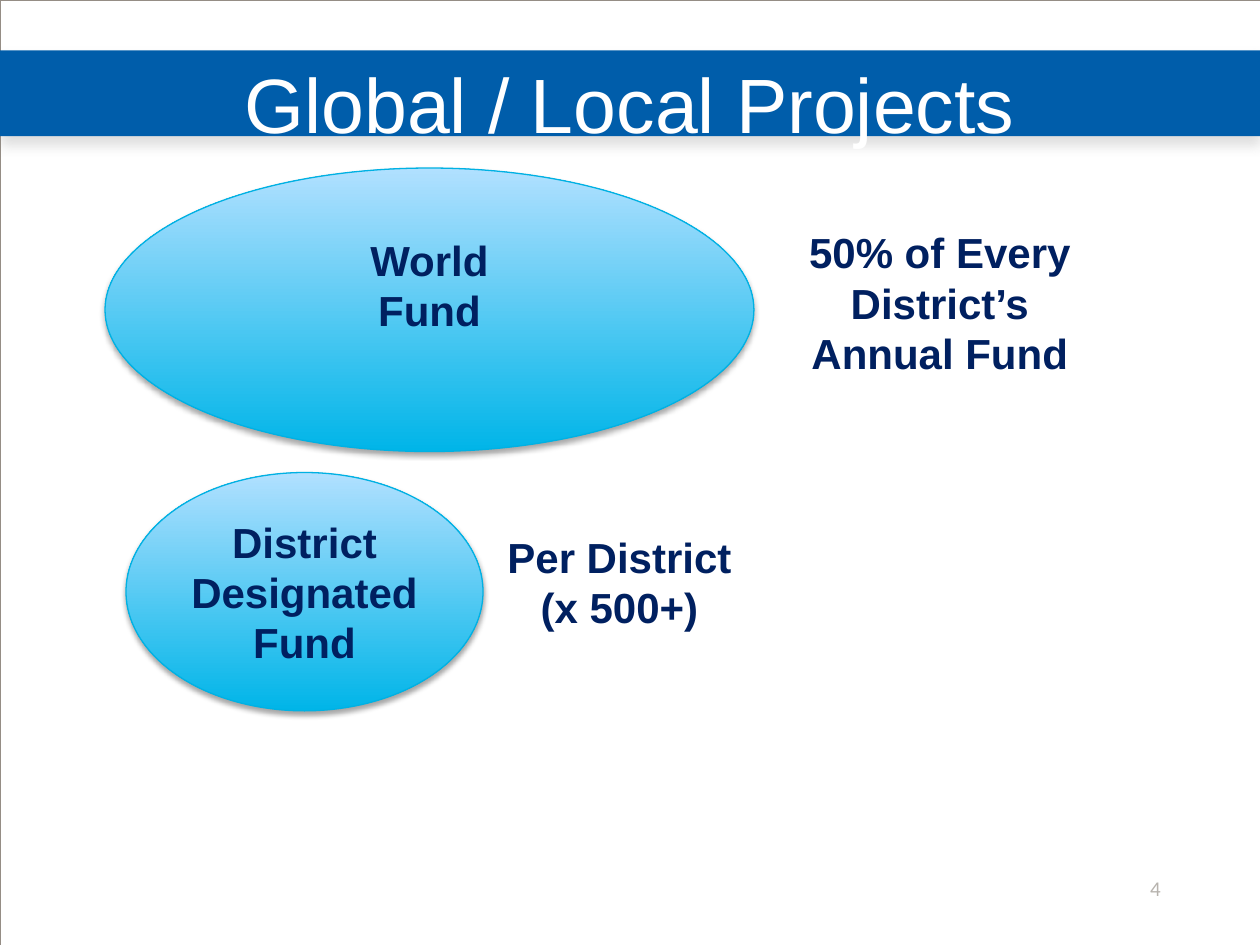
import dataclasses
import typing

import lxml.etree
import pptx
import pptx.dml.color
import pptx.enum.shapes
import pptx.enum.text
import pptx.oxml.ns
import pptx.util

SHAPE = pptx.enum.shapes.MSO_SHAPE
ALIGN = pptx.enum.text.PP_ALIGN
ANCHOR = pptx.enum.text.MSO_ANCHOR
AUTO_SIZE = pptx.enum.text.MSO_AUTO_SIZE
COLUMNS, ROWS = 120, 90


@dataclasses.dataclass(frozen=True)
class Theme:
    frame: str = "958D85"
    banner: str = "005DAA"
    title: str = "FFFFFF"
    label: str = "002060"
    number: str = "B7B3AE"
    fund_line: str = "00B1E3"
    fund_fill: tuple[str, str] = ("00B5E8", "B1E0FF")
    font: str = "Arial"
    number_font: str = "Calibri"
    title_size: float = 44
    label_size: float = 24
    number_size: float = 12


class Cell(typing.NamedTuple):
    column: float
    row: float
    columns: float
    rows: float


class Shadow(typing.NamedTuple):
    color: str
    opacity: int
    blur: float
    distance: float


class Fund(typing.NamedTuple):
    cell: Cell
    lines: list[str]
    bottom_margin: float


class Note(typing.NamedTuple):
    cell: Cell
    lines: list[str]
    wraps: bool


THEME = Theme()
BANNER_SHADOW = Shadow("808080", 25, 7, 4.8)
FUND_SHADOW = Shadow("000000", 35, 3.1, 1.8)
LABEL_FORMAT = {"name": THEME.font, "size": pptx.util.Pt(THEME.label_size), "bold": True}
TITLE_FORMAT = {"name": THEME.font, "size": pptx.util.Pt(THEME.title_size)}
NUMBER_FORMAT = {"name": THEME.number_font, "size": pptx.util.Pt(THEME.number_size)}

FUNDS = [
    Fund(Cell(10, 16, 61.8, 27), ["World", "Fund"], 0.45),
    Fund(Cell(12, 45, 34, 22.7), ["District", "Designated", "Fund"], 0.05),
]
NOTES = [
    Note(Cell(47, 50, 24, 10.9), ["Per District", "(x 500+)"], False),
    Note(Cell(70, 21, 39, 15.7), ["50% of Every District’s", "Annual Fund"], True),
]

deck = pptx.Presentation()
deck.slide_width = pptx.util.Inches(10)
deck.slide_height = pptx.util.Inches(7.5)
slide = deck.slides.add_slide(deck.slide_layouts[6])


def rgb(color: str) -> pptx.dml.color.RGBColor:
    return pptx.dml.color.RGBColor.from_string(color)


def place(cell: Cell) -> tuple[int, int, int, int]:
    width, height = deck.slide_width / COLUMNS, deck.slide_height / ROWS
    return (round(cell.column * width), round(cell.row * height),
            round(cell.columns * width), round(cell.rows * height))


def add_plain_shape(kind, cell: Cell):
    shape = slide.shapes.add_shape(kind, *place(cell))
    shape.shadow.inherit = False
    return shape


def cast_shadow(shape, shadow: Shadow) -> None:
    qn = pptx.oxml.ns.qn
    effects = shape._element.spPr.find(qn("a:effectLst"))
    outer = lxml.etree.SubElement(
        effects, qn("a:outerShdw"), blurRad=str(pptx.util.Pt(shadow.blur)),
        dist=str(pptx.util.Pt(shadow.distance)), dir="5400000", rotWithShape="0")
    color = lxml.etree.SubElement(outer, qn("a:srgbClr"), val=shadow.color)
    lxml.etree.SubElement(color, qn("a:alpha"), val=str(shadow.opacity * 1000))


def write(shape, lines: list[str], text_format: dict, color: str,
          frame_format: dict, alignment=ALIGN.CENTER) -> None:
    frame = shape.text_frame
    for attribute, value in frame_format.items():
        setattr(frame, attribute, value)
    for index, line in enumerate(lines):
        paragraph = frame.add_paragraph() if index else frame.paragraphs[0]
        paragraph.alignment = alignment
        run = paragraph.add_run()
        run.text = line
        for attribute, value in text_format.items():
            setattr(run.font, attribute, value)
        run.font.color.rgb = rgb(color)


def draw_fund(fund: Fund) -> None:
    ellipse = add_plain_shape(SHAPE.OVAL, fund.cell)
    ellipse.fill.gradient()
    ellipse.fill.gradient_angle = 90
    for stop, color, position in zip(ellipse.fill.gradient_stops, THEME.fund_fill, (0, 1)):
        stop.color.rgb = rgb(color)
        stop.position = position
    ellipse.line.color.rgb = rgb(THEME.fund_line)
    ellipse.line.width = pptx.util.Pt(0.75)
    cast_shadow(ellipse, FUND_SHADOW)
    side = pptx.util.Inches(0.05)
    write(ellipse, fund.lines, LABEL_FORMAT, THEME.label, {
        "word_wrap": True, "vertical_anchor": ANCHOR.MIDDLE,
        "margin_left": side, "margin_right": side,
        "margin_bottom": pptx.util.Inches(fund.bottom_margin)})


def draw_note(note: Note) -> None:
    write(slide.shapes.add_textbox(*place(note.cell)), note.lines, LABEL_FORMAT, THEME.label,
          {"word_wrap": note.wraps, "auto_size": AUTO_SIZE.SHAPE_TO_FIT_TEXT})


def main() -> None:
    border = add_plain_shape(SHAPE.RECTANGLE, Cell(0, 0, COLUMNS, ROWS))
    border.fill.background()
    border.line.color.rgb = rgb(THEME.frame)
    border.line.width = pptx.util.Pt(0.13)

    banner = add_plain_shape(SHAPE.RECTANGLE, Cell(0, 4.8, COLUMNS, 8.16))
    banner.fill.solid()
    banner.fill.fore_color.rgb = rgb(THEME.banner)
    banner.line.fill.background()
    cast_shadow(banner, BANNER_SHADOW)

    title = slide.shapes.add_textbox(*place(Cell(8.28, 4.8, 103.44, 8.16)))
    write(title, ["Global / Local Projects"], TITLE_FORMAT, THEME.title, {
        "word_wrap": True, "vertical_anchor": ANCHOR.TOP,
        "margin_top": pptx.util.Inches(0.05), "margin_bottom": 0})

    page_number = slide.shapes.add_textbox(*place(Cell(84.72, 82.2, 27, 4.8)))
    write(page_number, ["4"], NUMBER_FORMAT, THEME.number,
          {"word_wrap": True, "vertical_anchor": ANCHOR.MIDDLE}, ALIGN.RIGHT)

    for fund in FUNDS:
        draw_fund(fund)
    for note in NOTES:
        draw_note(note)
    deck.save("out.pptx")


if __name__ == "__main__":
    main()
